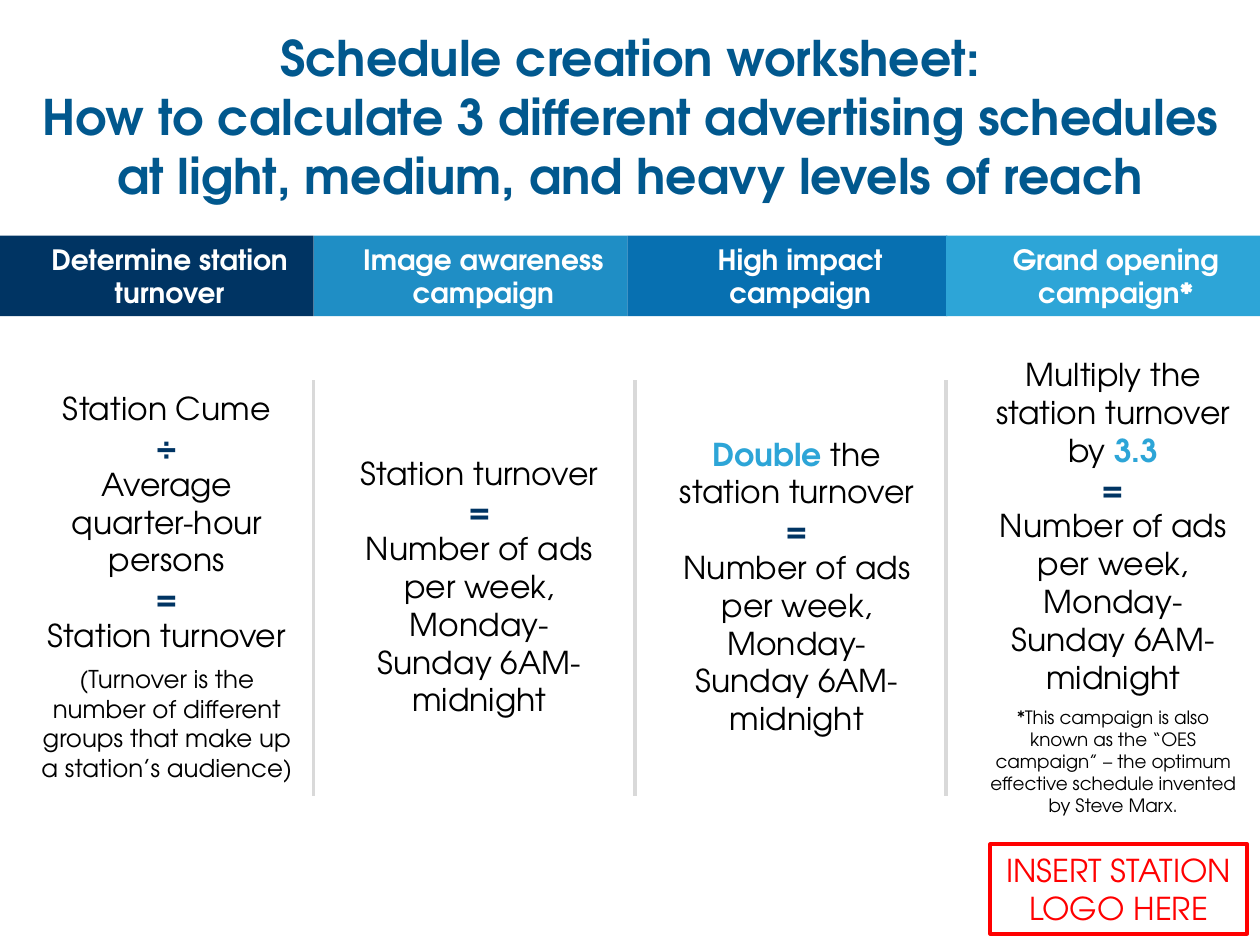
from dataclasses import dataclass

from lxml import etree
from pptx import Presentation
from pptx.dml.color import RGBColor
from pptx.enum.shapes import MSO_CONNECTOR, MSO_SHAPE
from pptx.enum.text import MSO_ANCHOR, MSO_AUTO_SIZE, PP_ALIGN
from pptx.oxml.ns import qn
from pptx.util import Inches, Pt

CENTER = PP_ALIGN.CENTER
TOP, MIDDLE = MSO_ANCHOR.TOP, MSO_ANCHOR.MIDDLE
NO_AUTOFIT = MSO_AUTO_SIZE.NONE
RECTANGLE = MSO_SHAPE.RECTANGLE
STRAIGHT = MSO_CONNECTOR.STRAIGHT

FONT = "TeX Gyre Adventor"
COLORS = {
    "title": "01588E", "navy": "003463", "blue": "1F8EC5", "deep": "0770B1",
    "sky": "2DA5D7", "black": "000000", "white": "FFFFFF",
    "rule": "D9D9D9", "red": "FF0000",
}
HEADER_TOP, HEADER_HEIGHT = 1.87, 0.64
RULE_TOP, RULE_BOTTOM = 3.02, 6.32
RULE_LEFTS = (2.49, 5.04, 7.51)


@dataclass(frozen=True)
class Area:
    left: float
    top: float
    width: float
    height: float

    def lengths(self) -> tuple:
        return tuple(Inches(n) for n in (self.left, self.top, self.width, self.height))


@dataclass(frozen=True)
class Span:
    text: str
    color: str


@dataclass(frozen=True)
class Para:
    text: str
    color: str = "black"
    bold: bool = False
    size: float = 18
    after: float = 0
    lead: Span | None = None
    tail: Span | None = None


@dataclass(frozen=True)
class Column:
    heading: str
    fill: str
    left: float
    width: float
    body: Area
    paras: tuple[Para, ...]


def rgb(name: str) -> RGBColor:
    return RGBColor.from_string(COLORS[name])


def add_span(para, text: str, color: str, bold: bool) -> None:
    span = para.add_run()
    span.text = text
    span.font.color.rgb = rgb(color)
    span.font.bold = bold


def write_paras(frame, paras: tuple[Para, ...]) -> None:
    for index, item in enumerate(paras):
        para = frame.add_paragraph() if index else frame.paragraphs[0]
        para.alignment = CENTER
        para.space_before, para.space_after = Pt(0), Pt(item.after)
        para.font.name, para.font.size = FONT, Pt(item.size)
        if item.lead:
            add_span(para, item.lead.text, item.lead.color, True)
        add_span(para, item.text, item.color, item.bold)
        if item.tail:
            add_span(para, item.tail.text, item.tail.color, True)


def add_title(page, area: Area, text: str) -> None:
    title = page.shapes.title
    title.left, title.top, title.width, title.height = area.lengths()
    frame = title.text_frame
    frame.auto_size, frame.vertical_anchor = NO_AUTOFIT, TOP
    frame.word_wrap = True
    para = frame.paragraphs[0]
    para.text = text
    para.alignment = CENTER
    para.font.name, para.font.size, para.font.bold = FONT, Pt(28), True
    para.font.color.rgb = rgb("title")


def add_body(page, area: Area, paras: tuple[Para, ...]) -> None:
    box = page.shapes.add_textbox(*area.lengths())
    box.text_frame.word_wrap = True
    write_paras(box.text_frame, paras)


def add_panel(page, area: Area, para: Para, left_inset: float, right_inset: float,
              fill: str | None = None, outline: str | None = None) -> None:
    panel = page.shapes.add_shape(RECTANGLE, *area.lengths())
    panel.shadow.inherit = False
    if fill:
        panel.fill.solid()
        panel.fill.fore_color.rgb = rgb(fill)
    else:
        panel.fill.background()
    if outline:
        panel.line.color.rgb = rgb(outline)
        panel.line.width = Pt(2.25)
    else:
        panel.line.fill.background()
    frame = panel.text_frame
    frame.word_wrap, frame.vertical_anchor = True, MIDDLE
    frame.margin_left, frame.margin_right = Inches(left_inset), Inches(right_inset)
    write_paras(frame, (para,))


def add_rule(page, left: float) -> None:
    rule = page.shapes.add_connector(
        STRAIGHT, Inches(left), Inches(RULE_TOP), Inches(left), Inches(RULE_BOTTOM))
    rule.line.color.rgb = rgb("rule")
    rule.line.width = Pt(2)
    etree.SubElement(rule._element.spPr, qn("a:effectLst"))


EQUALS = Para("=", "navy", True)
ADS = "Number of ads per week, Monday-Sunday 6AM-midnight"
COLUMNS = (
    Column("Determine station turnover", "navy", 0, 2.49, Area(0.16, 3.04, 2.33, 3.25), (
        Para("Station Cume"),
        Para("÷", "navy", True),
        Para("Average"),
        Para("quarter-hour persons"),
        EQUALS,
        Para("Station turnover", after=6),
        Para("(Turnover is the number of different groups that make up a station’s audience)",
             size=14, after=6),
    )),
    Column("Image awareness campaign", "blue", 2.49, 2.49, Area(2.74, 3.55, 2.13, 2.22), (
        Para("Station turnover"), EQUALS, Para(ADS),
    )),
    Column("High impact campaign", "deep", 4.98, 2.54, Area(5.26, 3.4, 2.13, 2.52), (
        Para(" the station turnover", lead=Span("Double", "sky")), EQUALS, Para(ADS),
    )),
    Column("Grand opening campaign*", "sky", 7.51, 2.49, Area(7.74, 2.77, 2.19, 3.8), (
        Para("Multiply the station turnover by ", tail=Span("3.3", "sky")),
        EQUALS,
        Para(ADS, after=6),
        Para("*This campaign is also known as the “OES campaign” – the optimum effective "
             "schedule invented by Steve Marx.", size=10.5, after=6),
    )),
)


def main() -> None:
    deck = Presentation()
    deck.slide_width, deck.slide_height = Inches(10), Inches(7.5)
    page = deck.slides.add_slide(deck.slide_layouts[5])
    add_title(page, Area(0, 0.17, 10, 1.51),
              "Schedule creation worksheet:\vHow to calculate 3 different advertising "
              "schedules at light, medium, and heavy levels of reach")
    for column in COLUMNS:
        add_body(page, column.body, column.paras)
        add_panel(page, Area(column.left, HEADER_TOP, column.width, HEADER_HEIGHT),
                  Para(column.heading, "white", True, 16), 0.3, 0.1, fill=column.fill)
    for left in RULE_LEFTS:
        add_rule(page, left)
    add_panel(page, Area(7.86, 6.7, 2.04, 0.71),
              Para("INSERT STATION LOGO HERE", "red"), 0.05, 0.05, outline="red")
    deck.save("out.pptx")


if __name__ == "__main__":
    main()
